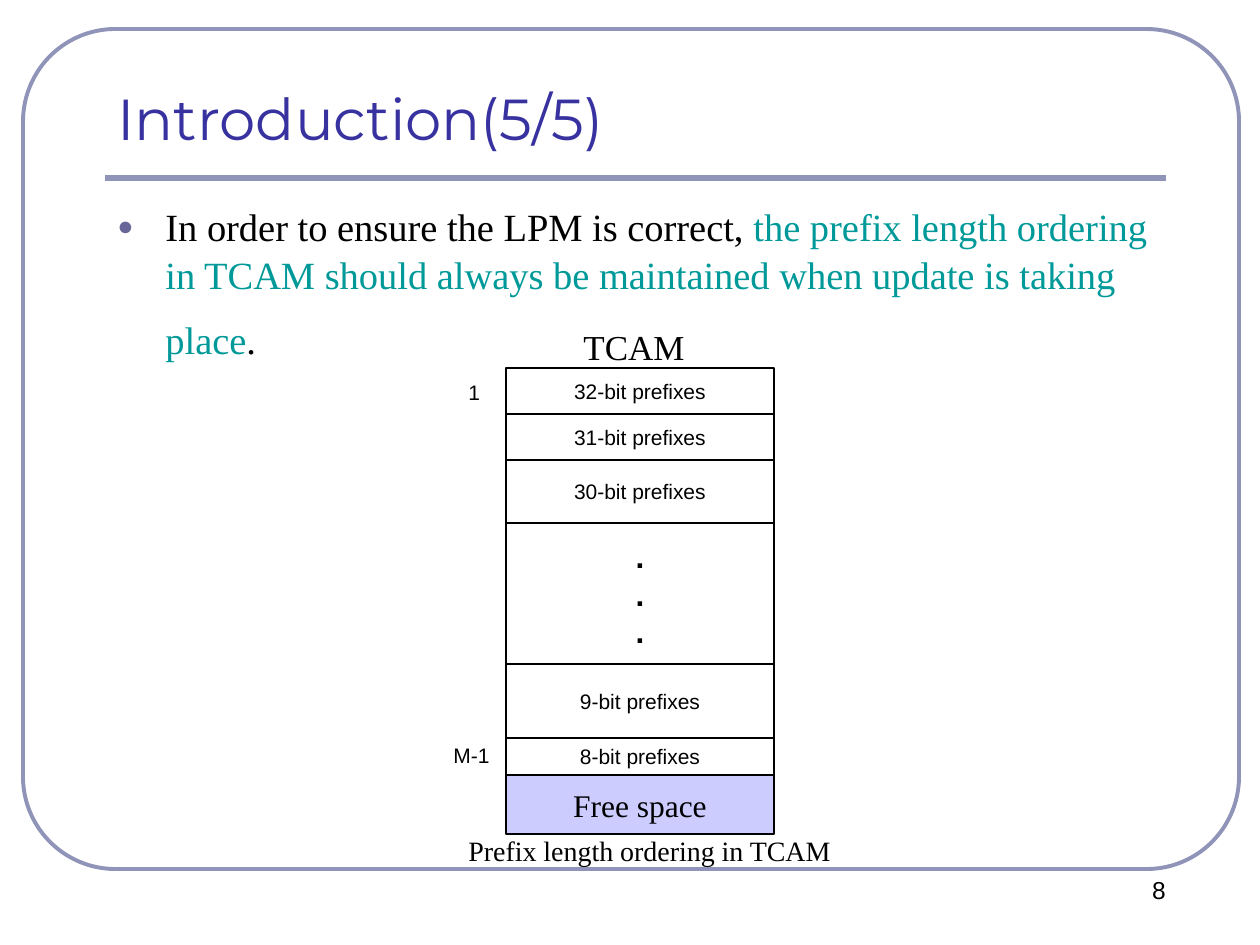
from lxml import etree
from pptx import Presentation
from pptx.dml.color import RGBColor
from pptx.enum.shapes import MSO_CONNECTOR, MSO_SHAPE
from pptx.enum.text import MSO_ANCHOR, PP_ALIGN
from pptx.oxml.ns import qn
from pptx.util import Pt

RECT, ROUNDED = MSO_SHAPE.RECTANGLE, MSO_SHAPE.ROUNDED_RECTANGLE
STRAIGHT = MSO_CONNECTOR.STRAIGHT
MIDDLE, BOTTOM = MSO_ANCHOR.MIDDLE, MSO_ANCHOR.BOTTOM
LEFT, CENTER = PP_ALIGN.LEFT, PP_ALIGN.CENTER
PX = 914400 / 126
SERIF, SANS = "Times New Roman", "Arial"
BLACK, FRAME = "000000", "9094B8"


def color(hex_text):
    return RGBColor.from_string(hex_text)


def style(run, size, font, ink=BLACK, bold=False):
    run.font.size = Pt(size)
    run.font.name = font
    run.font.color.rgb = color(ink)
    run.font.bold = bold


prs = Presentation()
prs.slide_width, prs.slide_height = round(1260 * PX), round(945 * PX)
slide = prs.slides.add_slide(prs.slide_layouts[6])
shapes = slide.shapes

# Rounded frame and title rule
frame = shapes.add_shape(ROUNDED, *[round(v * PX) for v in (23, 29, 1216, 840)])
frame.adjustments[0] = 0.11
frame.fill.background()
frame.line.color.rgb = color(FRAME)
frame.line.width = Pt(2.25)
frame.shadow.inherit = False

rule = shapes.add_connector(STRAIGHT, *[round(v * PX) for v in (105, 178, 1166, 178)])
rule.line.color.rgb = color(FRAME)
rule.line.width = Pt(3)
etree.SubElement(rule._element.spPr, qn("a:effectLst"))

# Bulleted statement
body = shapes.add_textbox(*[round(v * PX) for v in (105, 195, 1061, 689)])
body.text_frame.word_wrap = True
statement = body.text_frame.paragraphs[0]
statement.line_spacing = 1.04
for text, size, font, ink in [
    ("In order to ensure the LPM is correct, ", 22, SERIF, BLACK),
    ("the prefix length ordering in TCAM should always be maintained "
     "when update is taking place", 22, SERIF, "009999"),
    (".", 22, SERIF, BLACK),
    (" ", 31, SANS, BLACK),
]:
    run = statement.add_run()
    run.text = text
    style(run, size, font, ink)
props = statement._p.get_or_add_pPr()
indent = round(48 * PX)
props.set("marL", str(indent))
props.set("indent", str(-indent))
bullet_color = etree.SubElement(props, qn("a:buClr"))
etree.SubElement(bullet_color, qn("a:srgbClr"), val="666699")
etree.SubElement(props, qn("a:buSzPct"), val="70000")
etree.SubElement(props, qn("a:buFont"), typeface=SANS)
etree.SubElement(props, qn("a:buChar"), char="●")

# TCAM rows, stacked from the top edge down
row_top = 368
for text, height, size, font, fill, bold in [
    ("32-bit prefixes", 46, 12, SANS, "FFFFFF", False),
    ("31-bit prefixes", 46, 12, SANS, "FFFFFF", False),
    ("30-bit prefixes", 63, 12, SANS, "FFFFFF", False),
    (".\n.\n.", 141, 18, SANS, "FFFFFF", True),
    ("9-bit prefixes", 74, 12, SANS, "FFFFFF", False),
    ("8-bit prefixes", 37, 12, SANS, "FFFFFF", False),
    ("Free space", 59, 18, SERIF, "CCCCFF", False),
]:
    row = shapes.add_shape(RECT, *[round(v * PX) for v in (506, row_top, 268, height)])
    row.fill.solid()
    row.fill.fore_color.rgb = color(fill)
    row.line.color.rgb = color(BLACK)
    row.line.width = Pt(0.75)
    row.shadow.inherit = False
    row.text_frame.text = text
    row.text_frame.word_wrap = False
    row.text_frame.vertical_anchor = MIDDLE
    for paragraph in row.text_frame.paragraphs:
        paragraph.alignment = CENTER
        style(paragraph.runs[0], size, font, bold=bold)
    row_top += height

# Title, diagram labels and page number
for text, box, size, font, ink, align in [
    ("Introduction(5/5)", (105, 76, 1061, 82), 33, "Montserrat", "3732A0", LEFT),
    ("1", (456, 373, 35, 38), 12, SANS, BLACK, LEFT),
    ("M-1", (441, 736, 64, 38), 12, SANS, BLACK, LEFT),
    ("TCAM", (571, 319, 134, 54), 20, SERIF, BLACK, LEFT),
    ("Prefix length ordering in TCAM", (456, 827, 392, 50), 16, SERIF, BLACK, LEFT),
    ("8", (1091, 869, 136, 63), 14, SANS, BLACK, CENTER),
]:
    label = shapes.add_textbox(*[round(v * PX) for v in box])
    label.text_frame.word_wrap = True
    label.text_frame.text = text
    label.text_frame.paragraphs[0].alignment = align
    style(label.text_frame.paragraphs[0].runs[0], size, font, ink)
    if text.startswith("Introduction"):
        label.text_frame.vertical_anchor = BOTTOM

prs.save("out.pptx")
